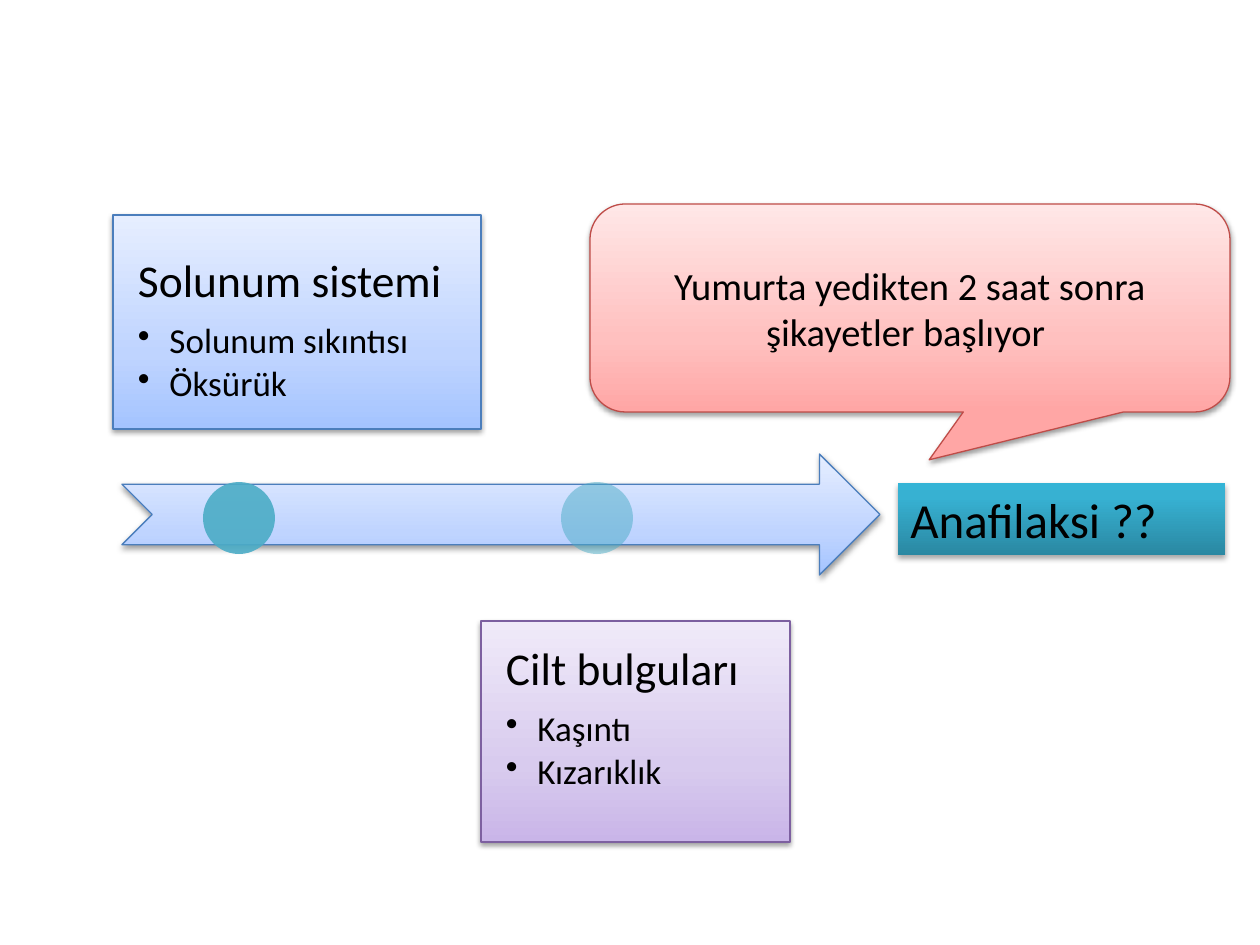
from lxml import etree
from pptx import Presentation
from pptx import util as u
from pptx.dml.color import RGBColor
from pptx.enum import shapes, text
from pptx.oxml.ns import qn

SCALE = 914400 / 126
BLUE = ("A4C4FF", "BFD4FF", "E6EEFF")
PURPLE = ("C9B5E8", "D8CBEE", "F0EAF9")
RED = ("FFA6A5", "FFC0BF", "FFE7E7")
TEAL = ("2A88A2", "37B1D2", "34B4D6")
Kind = shapes.MSO_SHAPE
Anchor = text.MSO_ANCHOR


def px(length):
    return u.Emu(round(length * SCALE))


def rgb(value):
    return RGBColor.from_string(value)


def add_xml(parent, tag, **attributes):
    names = {key: str(value) for key, value in attributes.items()}
    return etree.SubElement(parent, qn(f"a:{tag}"), names)


class TimelineSlide:
    font = "Calibri"
    ink = "000000"

    def __init__(self, slide):
        self.slide = slide

    def shape(self, kind, box):
        shape = self.slide.shapes.add_shape(kind, *map(px, box))
        shape.shadow.inherit = False
        shape.line.fill.background()
        return shape

    def panel(self, kind, box, colors, line=None, middle=35, shadow=(38, 1.6)):
        """Add a shape with a bottom-to-top gradient and a soft shadow."""
        panel = self.shape(kind, box)
        panel.fill.gradient()
        panel.fill.gradient_angle = 90
        stops = panel._element.spPr.find(qn("a:gradFill")).find(qn("a:gsLst"))
        for stop in list(stops):
            stops.remove(stop)
        for position, color in zip((0, middle, 100), colors):
            stop = add_xml(stops, "gs", pos=position * 1000)
            add_xml(stop, "srgbClr", val=color)
        stops.getparent().find(qn("a:lin")).set("ang", str(270 * 60000))
        if line:
            panel.line.color.rgb = rgb(line)
            panel.line.width = u.Pt(0.75)

        opacity, distance = shadow
        effects = panel._element.spPr.find(qn("a:effectLst"))
        outer = add_xml(effects, "outerShdw", blurRad=u.Pt(3.1),
                        dist=u.Pt(distance), dir=90 * 60000, rotWithShape=0)
        black = add_xml(outer, "srgbClr", val="000000")
        add_xml(black, "alpha", val=opacity * 1000)
        return panel

    def marker(self, box, opacity):
        marker = self.shape(Kind.OVAL, box)
        marker.fill.solid()
        marker.fill.fore_color.rgb = rgb("4BACC6")
        color = marker._element.spPr.find(qn("a:solidFill"))[0]
        add_xml(color, "alpha", val=opacity * 1000)

    def style(self, paragraph, size, align=text.PP_ALIGN.LEFT):
        paragraph.alignment = align
        paragraph.font.name = self.font
        paragraph.font.size = u.Pt(size)
        paragraph.font.color.rgb = rgb(self.ink)

    def label(self, panel, wording, size, anchor, align=text.PP_ALIGN.LEFT):
        frame = panel.text_frame
        frame.word_wrap = True
        frame.vertical_anchor = anchor
        frame.text = wording
        self.style(frame.paragraphs[0], size, align)

    def findings(self, box, colors, line, anchor, heading, symptoms):
        """Add a panel with a heading over bulleted symptoms."""
        panel = self.panel(Kind.RECTANGLE, box, colors, line)
        frame = panel.text_frame
        frame.word_wrap = True
        frame.vertical_anchor = anchor
        frame.margin_left = frame.margin_right = px(25)
        frame.margin_top = frame.margin_bottom = px(25)
        frame.text = "\n".join([heading, *symptoms])
        for index, paragraph in enumerate(frame.paragraphs):
            paragraph.line_spacing = 0.9
            properties = paragraph._p.get_or_add_pPr()
            after = add_xml(properties, "spcAft")
            add_xml(after, "spcPct", val=15000 if index else 35000)
            if index:
                paragraph.level = 1
                properties.set("marL", str(u.Inches(0.25)))
                properties.set("indent", str(u.Inches(-0.25)))
                add_xml(properties, "buChar", char="•")
            self.style(paragraph, 20 if index else 26)


def main():
    deck = Presentation()
    deck.slide_width, deck.slide_height = px(1260), px(945)
    page = TimelineSlide(deck.slides.add_slide(deck.slide_layouts[6]))

    page.panel(Kind.NOTCHED_RIGHT_ARROW, (122, 454, 758, 121), BLUE, "4B7EBC")
    page.findings((113, 215, 368, 214), BLUE, "4B7EBC", Anchor.BOTTOM,
                  "Solunum sistemi", ["Solunum sıkıntısı", "Öksürük"])
    page.marker((203, 482, 72, 72), 90)
    page.findings((481, 621, 309, 221), PURPLE, "7D60A0", Anchor.TOP,
                  "Cilt bulguları", ["Kaşıntı", "Kızarıklık"])
    page.marker((561, 482, 72, 72), 50)

    diagnosis = page.panel(Kind.RECTANGLE, (898, 483, 327, 72), TEAL,
                           middle=80, shadow=(35, 1.8))
    page.label(diagnosis, "Anafilaksi ??", 28, Anchor.TOP)

    onset = page.panel(Kind.ROUNDED_RECTANGULAR_CALLOUT,
                       (590, 204, 640, 208), RED, "BF4C48")
    for index, value in enumerate((0.03, 0.73, 0.17)):
        onset.adjustments[index] = value
    page.label(onset, "Yumurta yedikten 2 saat sonra şikayetler başlıyor ", 22,
               Anchor.MIDDLE, text.PP_ALIGN.CENTER)

    deck.save("out.pptx")


if __name__ == "__main__":
    main()
